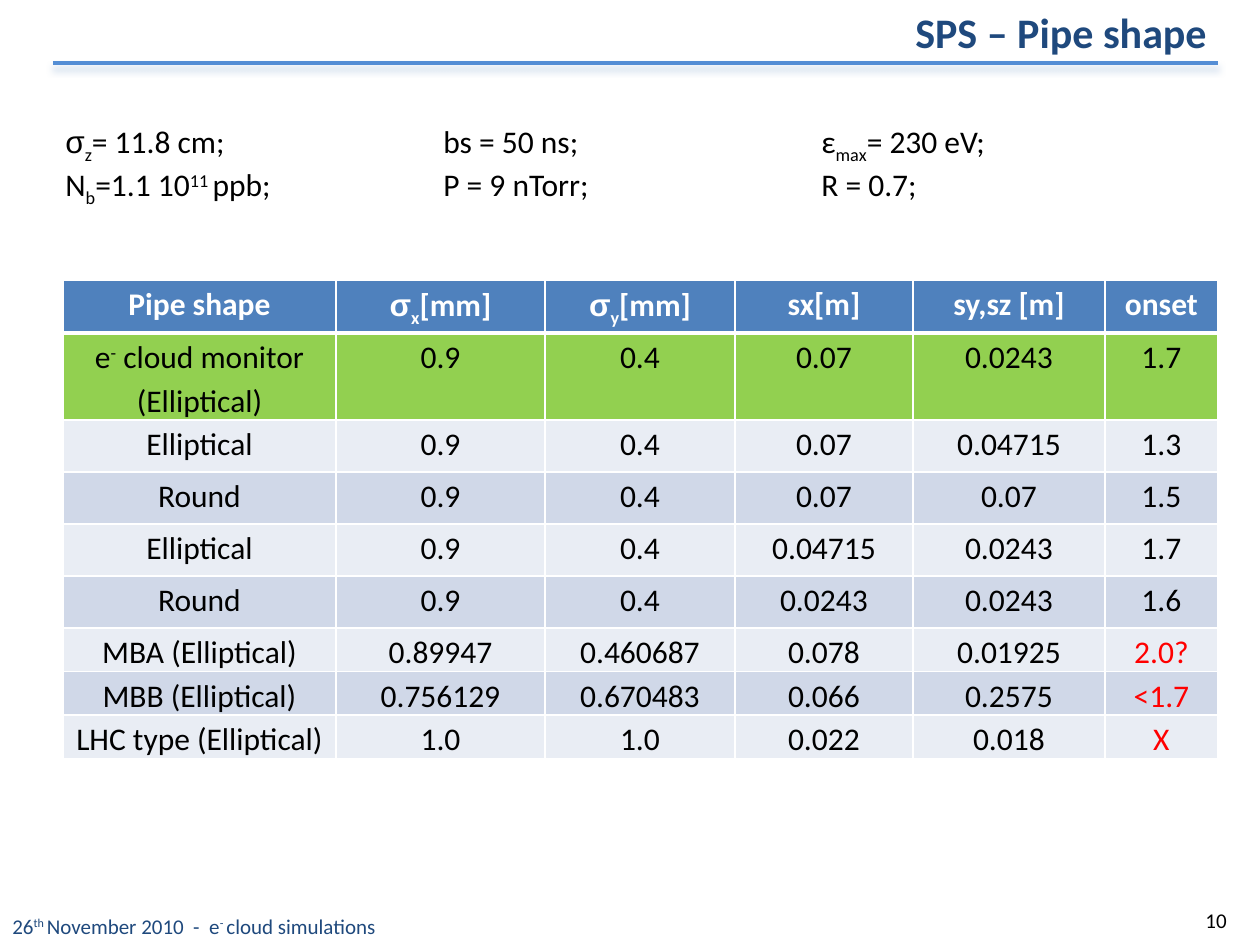
"""Builds the slide that compares SPS pipe shapes by electron cloud onset."""
from lxml import etree
from pptx import Presentation
from pptx import util as u
from pptx.dml.color import RGBColor
from pptx.enum import shapes, text
from pptx.oxml import parse_xml
from pptx.oxml.ns import nsdecls, qn

PX = 914400 / 126
COLORS = {
    "black": "000000", "white": "FFFFFF", "navy": "1F497D", "rule": "558ED5",
    "shadow": "95B3D7", "header": "4F81BD", "highlight": "92D050",
    "light": "E9EDF4", "band": "D0D8E8", "alert": "FF0000",
}
BASELINES = {"_": "-25000", "^": "30000"}
GREEK = "σε"
COLUMN_WIDTHS = [273, 209, 190, 178, 192, 113]
ROW_HEIGHTS = [53, 48, 52, 52, 52, 52, 34, 35, 21]
PIPE_SHAPES = [
    ["Pipe shape", "σ|_x|[mm]", "σ|_y|[mm]", "sx[m]", "sy,sz [m]", "onset"],
    ["e|^-| cloud monitor (Elliptical)", "0.9", "0.4", "0.07", "0.0243", "1.7"],
    ["Elliptical", "0.9", "0.4", "0.07", "0.04715", "1.3"],
    ["Round", "0.9", "0.4", "0.07", "0.07", "1.5"],
    ["Elliptical", "0.9", "0.4", "0.04715", "0.0243", "1.7"],
    ["Round", "0.9", "0.4", "0.0243", "0.0243", "1.6"],
    ["MBA (Elliptical)", "0.89947", "0.460687", "0.078", "0.01925", "2.0?"],
    ["MBB (Elliptical)", "0.756129", "0.670483", "0.066", "0.2575", "<1.7"],
    ["LHC type (Elliptical)", "1.0", "1.0", "0.022", "0.018", "X"],
]
UNCERTAIN_ONSETS = ("2.0?", "<1.7", "X")
BEAM_PARAMETERS = [
    "σ|_z|= 11.8 cm;\tbs = 50 ns;\tε|_max|= 230 eV;",
    "N|_b|=1.1 10|^11 |ppb;\tP = 9 nTorr;\tR = 0.7;",
]


def px(length):
    """Turn whole pixels into EMU."""
    return u.Emu(round(length * PX))


def write(paragraph, marked, size, color, bold=False):
    """Write runs split by |, where a leading _ or ^ lowers or raises a run."""
    for piece in marked.split("|"):
        run = paragraph.add_run()
        run.text = piece[1:] if piece[0] in BASELINES else piece
        run.font.name = "Arial" if piece in GREEK else "Calibri"
        run.font.size = u.Pt(size)
        run.font.bold = bold
        run.font.color.rgb = RGBColor.from_string(COLORS[color])
        if piece[0] in BASELINES:
            run.font._element.set("baseline", BASELINES[piece[0]])


def add_text(slide, box, lines, size, color, bold=False, grow=True):
    """Add a wrapping text box and return its frame."""
    frame = slide.shapes.add_textbox(*map(px, box)).text_frame
    frame.word_wrap = True
    if grow:
        frame.auto_size = text.MSO_AUTO_SIZE.SHAPE_TO_FIT_TEXT
    for index, line in enumerate(lines):
        paragraph = frame.add_paragraph() if index else frame.paragraphs[0]
        write(paragraph, line, size, color, bold)
    return frame


def add_tab_stops(paragraph, positions):
    """Set left tab stops, measured from the start of the text."""
    tabs = etree.SubElement(paragraph._p.get_or_add_pPr(), qn("a:tabLst"))
    for position in positions:
        etree.SubElement(tabs, qn("a:tab"), pos=str(px(position)), algn="l")


def add_rule(slide, left, right, top):
    """Add the title rule with its soft shadow."""
    rule = slide.shapes.add_connector(
        shapes.MSO_CONNECTOR.STRAIGHT, px(left), px(top), px(right), px(top))
    rule.line.color.rgb = RGBColor.from_string(COLORS["rule"])
    rule.line.width = u.Pt(2.75)
    rule._element.spPr.append(parse_xml(
        f'<a:effectLst {nsdecls("a")}><a:outerShdw blurRad="{u.Pt(4)}" '
        f'dist="{u.Pt(3)}" dir="5400000" rotWithShape="0">'
        f'<a:srgbClr val="{COLORS["shadow"]}"><a:alpha val="40000"/>'
        '</a:srgbClr></a:outerShdw></a:effectLst>'))


def set_borders(cell, top, bottom):
    """Give a cell white borders, with top and bottom widths in points."""
    properties = cell._tc.get_or_add_tcPr()
    for side, width in zip("LRTB", (1, 1, top, bottom)):
        properties.append(parse_xml(
            f'<a:ln{side} {nsdecls("a")} w="{u.Pt(width)}"><a:solidFill>'
            f'<a:srgbClr val="{COLORS["white"]}"/></a:solidFill></a:ln{side}>'))


def row_fill(row):
    """Name the fill of a table row."""
    if row < 2:
        return ("header", "highlight")[row]
    return "band" if row % 2 else "light"


def fill_cell(cell, marked, row):
    """Write and style one table cell."""
    cell.margin_left = cell.margin_right = px(9)
    cell.margin_top = cell.margin_bottom = 0
    set_borders(cell, top=3 if row == 1 else 1, bottom=3 if row == 0 else 1)
    cell.fill.solid()
    cell.fill.fore_color.rgb = RGBColor.from_string(COLORS[row_fill(row)])
    paragraph = cell.text_frame.paragraphs[0]
    paragraph.alignment = text.PP_ALIGN.CENTER
    paragraph.line_spacing = 1.15
    color = "alert" if marked in UNCERTAIN_ONSETS else "black"
    write(paragraph, marked, 18, color if row else "white", bold=row == 0)


def add_pipe_table(slide, left, top):
    """Add the table of pipe shapes."""
    table = slide.shapes.add_table(
        len(ROW_HEIGHTS), len(COLUMN_WIDTHS), px(left), px(top),
        px(sum(COLUMN_WIDTHS)), px(sum(ROW_HEIGHTS))).table
    for column, width in zip(table.columns, COLUMN_WIDTHS):
        column.width = px(width)
    for row, height in enumerate(ROW_HEIGHTS):
        table.rows[row].height = px(height)
        for column, marked in enumerate(PIPE_SHAPES[row]):
            fill_cell(table.cell(row, column), marked, row)


def main():
    """Build and save the slide."""
    presentation = Presentation()
    presentation.slide_width, presentation.slide_height = px(1260), px(945)
    slide = presentation.slides.add_slide(presentation.slide_layouts[6])

    number = add_text(slide, (945, 895, 294, 50), ["10"], 12, "black", grow=False)
    number.vertical_anchor = text.MSO_ANCHOR.MIDDLE
    number.paragraphs[0].alignment = text.PP_ALIGN.RIGHT
    add_rule(slide, 53, 1218, 63)
    add_text(slide, (0, 907, 1187, 38),
             ["26|^th |November 2010  -  e|^- |cloud simulations"], 12, "navy")
    add_text(slide, (903, 0, 325, 63), ["SPS – Pipe shape"], 24, "navy", bold=True)
    parameters = add_text(slide, (53, 116, 1144, 127), BEAM_PARAMETERS, 18, "black")
    for paragraph in parameters.paragraphs:
        add_tab_stops(paragraph, (378, 756))
    add_pipe_table(slide, 63, 280)

    presentation.save("out.pptx")


if __name__ == "__main__":
    main()
